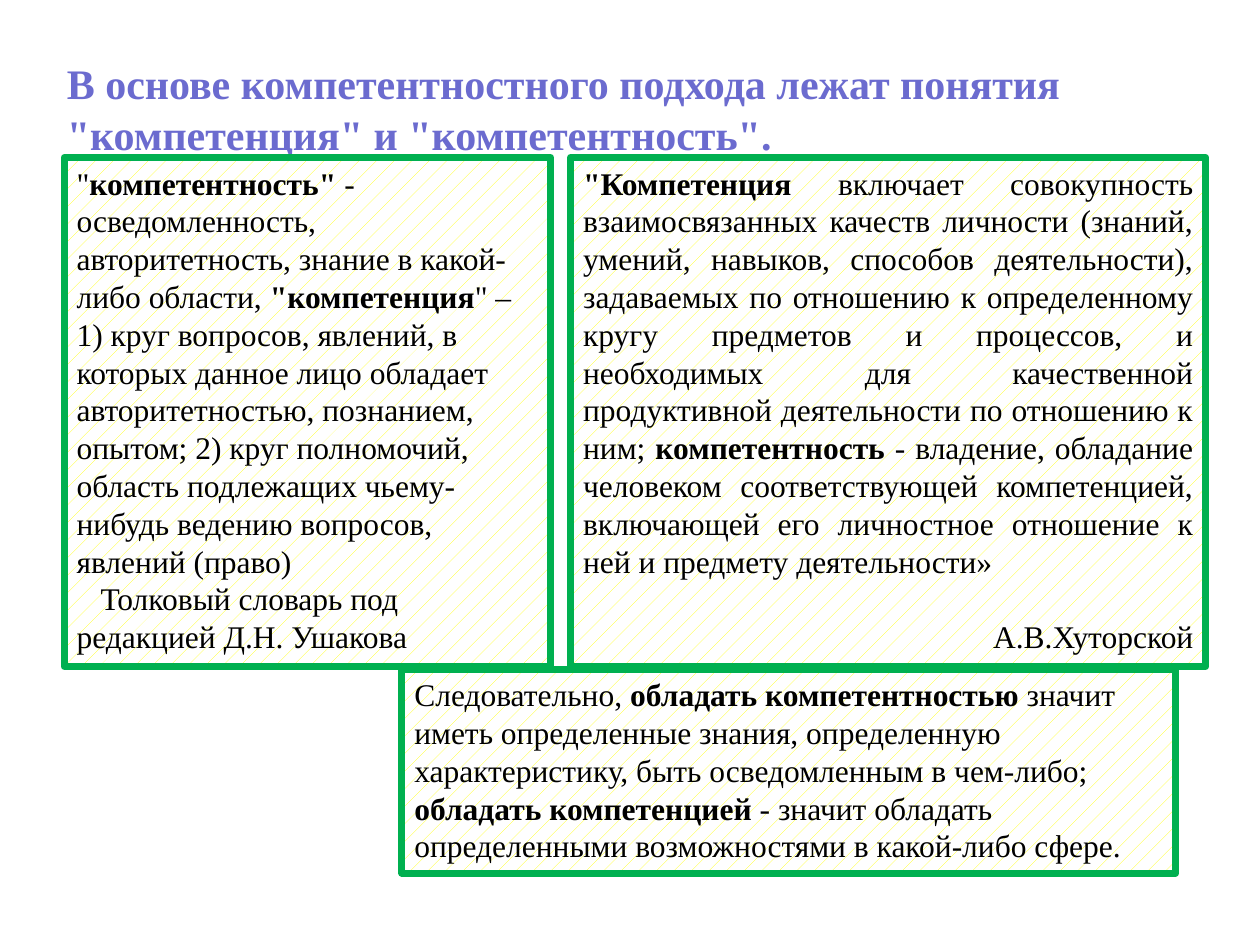
from dataclasses import dataclass

import pptx
import pptx.util
import pptx.dml.color
import pptx.enum.dml
import pptx.enum.shapes
import pptx.enum.text

Inches = pptx.util.Inches
Pt = pptx.util.Pt
RGBColor = pptx.dml.color.RGBColor
Align = pptx.enum.text.PP_ALIGN

FONT = "Times New Roman"
VIOLET = RGBColor(0x6B, 0x6B, 0xCF)
GREEN = RGBColor(0x00, 0xB0, 0x50)
YELLOW = RGBColor(0xFF, 0xFF, 0x00)
WHITE = RGBColor(0xFF, 0xFF, 0xFF)
BLACK = RGBColor(0x00, 0x00, 0x00)


@dataclass
class Passage:
    """A paragraph whose spans are (text, bold) pairs."""
    spans: list[tuple[str, bool]]
    align: Align = Align.LEFT
    space_before: float = 0
    indent: float = 0


@dataclass
class Panel:
    left: float
    top: float
    width: float
    height: float
    passages: list[Passage]


PANELS = [
    Panel(4.53, 1.25, 5.04, 4.04, [
        Passage([
            ('"Компетенция ', True),
            ("включает совокупность взаимосвязанных качеств личности (знаний, умений, "
             "навыков, способов деятельности), задаваемых по отношению к определенному "
             "кругу предметов и процессов, и необходимых для качественной продуктивной "
             "деятельности по отношению к ним; ", False),
            ("компетентность", True),
            (" - владение, обладание человеком соответствующей компетенцией, включающей "
             "его личностное отношение к ней и предмету деятельности»", False),
        ], align=Align.JUSTIFY),
        Passage([("А.В.Хуторской", False)], align=Align.RIGHT, space_before=21.5),
    ]),
    Panel(0.51, 1.25, 3.86, 4.04, [
        Passage([
            ('"', False),
            ('компетентность" ', True),
            ("- осведомленность, авторитетность, знание в какой-либо области, ", False),
            ('"компетенция', True),
            ('" –', False),
        ]),
        Passage([
            ("1) круг вопросов, явлений, в которых данное лицо обладает авторитетностью, "
             "познанием, опытом; 2) круг полномочий, область подлежащих чьему-нибудь "
             "ведению вопросов, явлений (право)", False),
        ]),
        Passage([("Толковый словарь под редакцией Д.Н. Ушакова", False)], indent=0.19),
    ]),
    Panel(3.19, 5.31, 6.14, 1.62, [
        Passage([
            ("Следовательно, ", False),
            ("обладать компетентностью ", True),
            ("значит иметь определенные знания, определенную характеристику, "
             "быть осведомленным в чем-либо; ", False),
            ("обладать компетенцией ", True),
            ("- значит обладать определенными возможностями в какой-либо сфере.", False),
        ]),
    ]),
]


def add_span(para, text: str, *, size: float = 18, color: RGBColor = BLACK,
             bold: bool = False) -> None:
    span = para.add_run()
    span.text = text
    span.font.name = FONT
    span.font.size = Pt(size)
    span.font.bold = bold
    span.font.color.rgb = color


def add_title(page, text: str) -> None:
    title = page.shapes.title
    title.left, title.top = Inches(0.43), Inches(0.36)
    title.width, title.height = Inches(8.98), Inches(0.87)
    frame = title.text_frame
    frame.word_wrap = True
    frame.auto_size = pptx.enum.text.MSO_AUTO_SIZE.NONE
    frame.vertical_anchor = pptx.enum.text.MSO_ANCHOR.TOP
    frame.margin_top = Inches(0.1)
    para = frame.paragraphs[0]
    para.alignment = Align.LEFT
    add_span(para, text, size=24, color=VIOLET, bold=True)


def add_panel(page, panel: Panel) -> None:
    box = page.shapes.add_shape(
        pptx.enum.shapes.MSO_SHAPE.RECTANGLE, Inches(panel.left), Inches(panel.top),
        Inches(panel.width), Inches(panel.height))
    box.shadow.inherit = False
    box.fill.patterned()
    box.fill.pattern = pptx.enum.dml.MSO_PATTERN.PERCENT_5
    box.fill.fore_color.rgb = YELLOW
    box.fill.back_color.rgb = WHITE
    box.line.color.rgb = GREEN
    box.line.width = Pt(4)

    frame = box.text_frame
    frame.word_wrap = True
    frame.auto_size = pptx.enum.text.MSO_AUTO_SIZE.SHAPE_TO_FIT_TEXT
    frame.vertical_anchor = pptx.enum.text.MSO_ANCHOR.TOP
    for index, passage in enumerate(panel.passages):
        para = frame.add_paragraph() if index else frame.paragraphs[0]
        para.alignment = passage.align
        if passage.space_before:
            para.space_before = Pt(passage.space_before)
        if passage.indent:
            para._p.get_or_add_pPr().set("indent", str(Inches(passage.indent)))
        for text, bold in passage.spans:
            add_span(para, text, bold=bold)


def main() -> None:
    deck = pptx.Presentation()
    deck.slide_width, deck.slide_height = Inches(10), Inches(7.5)
    page = deck.slides.add_slide(deck.slide_layouts.get_by_name("Title Only"))
    add_title(page, "В основе компетентностного подхода лежат понятия "
                    '"компетенция" и "компетентность".')
    for panel in PANELS:
        add_panel(page, panel)
    deck.save("out.pptx")


if __name__ == "__main__":
    main()
